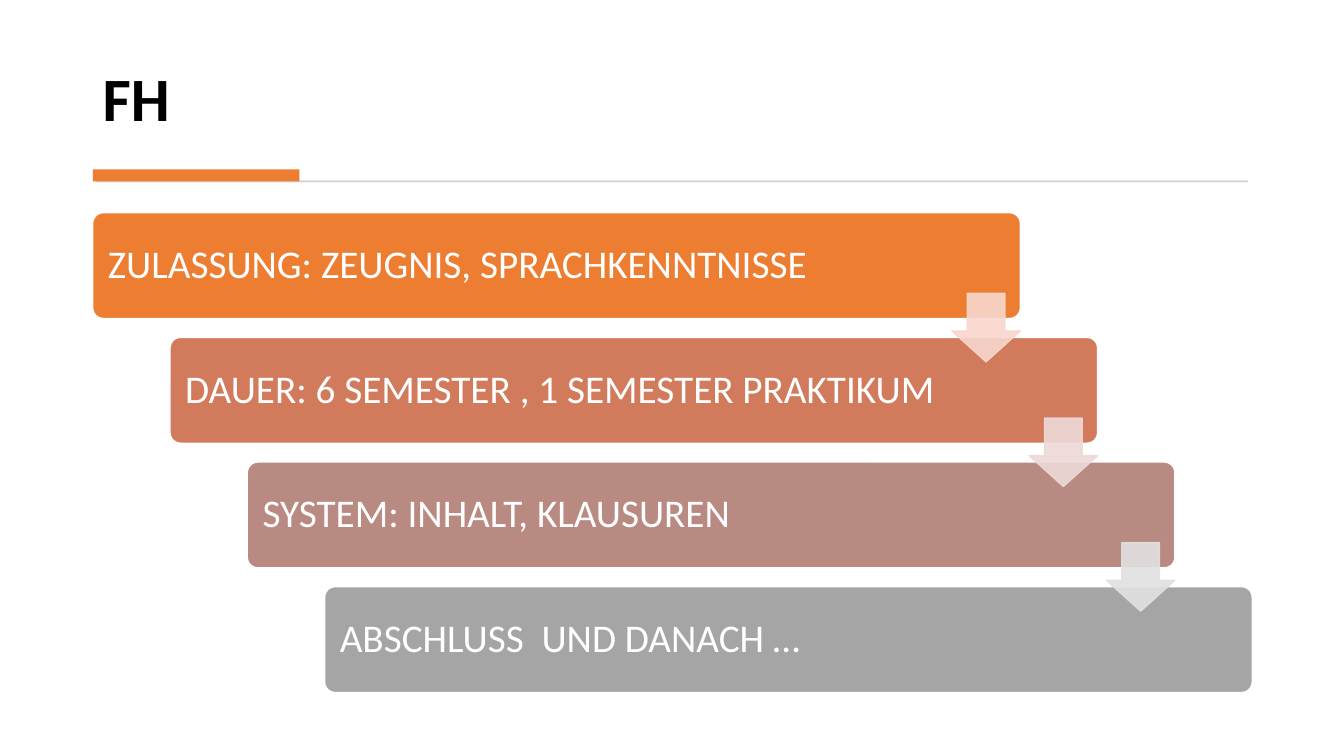
"""Build the FH slide: four staggered steps linked by down arrows."""
from lxml.etree import SubElement
from pptx import Presentation
from pptx.dml.color import RGBColor
from pptx.enum.shapes import MSO_SHAPE
from pptx.enum.text import MSO_ANCHOR, PP_ALIGN
from pptx.oxml.ns import qn
from pptx.util import Inches, Pt

TITLE = "FH"
STEPS = [
    ("ZULASSUNG: ZEUGNIS, SPRACHKENNTNISSE", "ED7D31"),
    ("DAUER: 6 SEMESTER , 1 SEMESTER PRAKTIKUM", "D17B5C"),
    ("SYSTEM: INHALT, KLAUSUREN", "B98A82"),
    ("ABSCHLUSS  UND DANACH …", "A5A5A5"),
]
ARROW_COLORS = ["F8D7CE", "EDD9D7", "E1E1E1"]
THEME = {
    "font": "Calibri", "title_size": 44, "step_size": 28,
    "title": "000000", "step_text": "FFFFFF", "outline": "FFFFFF",
    "rule": "D5D5D5", "accent": "ED7D31", "arrow_opacity": 90,
}

LEFT, TOP = 0.92, 2.11
STEP_WIDTH, STEP_HEIGHT = 9.2, 1.05
SHIFT_X, SHIFT_Y = 2.3 / (len(STEPS) - 1), 3.71 / (len(STEPS) - 1)
ARROW_SIZE, ARROW_DROP = 0.68, 0.8


def add_block(slide, kind, box, fill, line=None, adjustments=()):
    block = slide.shapes.add_shape(kind, *map(Inches, box))
    block.shadow.inherit = False
    block.fill.solid()
    block.fill.fore_color.rgb = RGBColor.from_string(fill)
    if line:
        block.line.color.rgb = RGBColor.from_string(line)
        block.line.width = Pt(1)
    else:
        block.line.fill.background()
    for index, value in enumerate(adjustments):
        block.adjustments[index] = value
    return block


def write(shape, text, size, color, anchor, inset, bold=False):
    frame = shape.text_frame
    frame.word_wrap = True
    frame.vertical_anchor = anchor
    frame.margin_left = frame.margin_right = Inches(inset)
    paragraph = frame.paragraphs[0]
    paragraph.text = text
    paragraph.alignment = PP_ALIGN.LEFT
    paragraph.line_spacing = 0.9
    paragraph.font.name = THEME["font"]
    paragraph.font.size = Pt(size)
    paragraph.font.bold = bold
    paragraph.font.color.rgb = RGBColor.from_string(color)


def set_opacity(shape, percent):
    for color in shape.element.spPr.iter(qn("a:srgbClr")):
        SubElement(color, qn("a:alpha")).set("val", str(percent * 1000))


def add_heading(slide):
    heading = slide.shapes.add_textbox(*map(Inches, (LEFT, 0.28, 11.49, 1.11)))
    write(heading, TITLE, THEME["title_size"], THEME["title"], MSO_ANCHOR.BOTTOM, 0.1, bold=True)
    add_block(slide, MSO_SHAPE.RECTANGLE, (0.95, 1.79, 11.43, 0.02), THEME["rule"])
    add_block(slide, MSO_SHAPE.RECTANGLE, (LEFT, 1.68, 2.05, 0.12), THEME["accent"])


def add_steps(slide):
    for row, (label, color) in enumerate(STEPS):
        box = (LEFT + row * SHIFT_X, TOP + row * SHIFT_Y, STEP_WIDTH, STEP_HEIGHT)
        step = add_block(slide, MSO_SHAPE.ROUNDED_RECTANGLE, box, color, THEME["outline"], [0.1])
        write(step, label, THEME["step_size"], THEME["step_text"], MSO_ANCHOR.MIDDLE, 0.12)


def add_arrows(slide):
    for row, color in enumerate(ARROW_COLORS):
        left = LEFT + row * SHIFT_X + STEP_WIDTH - ARROW_SIZE
        top = TOP + row * SHIFT_Y + ARROW_DROP
        box = (left, top, ARROW_SIZE, ARROW_SIZE)
        arrow = add_block(slide, MSO_SHAPE.DOWN_ARROW, box, color, color, [0.55, 0.45])
        set_opacity(arrow, THEME["arrow_opacity"])


def main():
    deck = Presentation()
    deck.slide_width, deck.slide_height = Inches(13.33), Inches(7.5)
    slide = deck.slides.add_slide(deck.slide_layouts[6])
    add_heading(slide)
    add_steps(slide)
    add_arrows(slide)
    deck.save("out.pptx")


if __name__ == "__main__":
    main()
